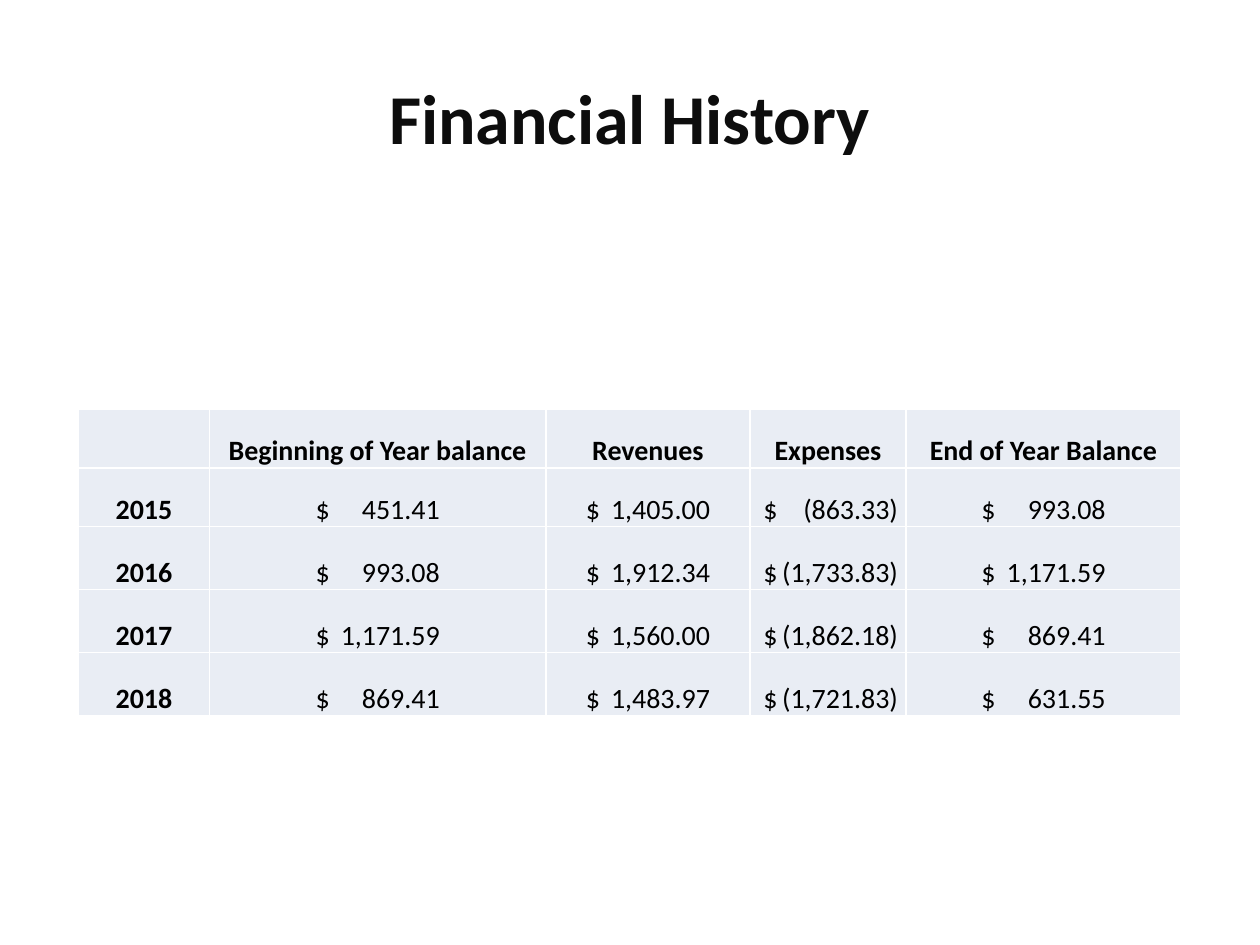
from lxml import etree
from pptx import Presentation
from pptx.dml.color import RGBColor
from pptx.enum.text import MSO_ANCHOR, PP_ALIGN
from pptx.oxml.ns import qn
from pptx.util import Pt

CENTER, LEFT = PP_ALIGN.CENTER, PP_ALIGN.LEFT
MIDDLE, BOTTOM = MSO_ANCHOR.MIDDLE, MSO_ANCHOR.BOTTOM
TITLE_ONLY = 5

FONT = "Calibri"
COLORS = {"title": "0D0D0D", "text": "000000", "cell": "E9EDF4", "border": "FFFFFF"}

HEADERS = ["", "Beginning of Year balance", "Revenues", "Expenses", "End of Year Balance"]
HISTORY = [
    ("2015", "451.41", "1,405.00", "(863.33)", "993.08"),
    ("2016", "993.08", "1,912.34", "(1,733.83)", "1,171.59"),
    ("2017", "1,171.59", "1,560.00", "(1,862.18)", "869.41"),
    ("2018", "869.41", "1,483.97", "(1,721.83)", "631.55"),
]
COLUMN_WIDTHS = [74.9, 192.3, 116.6, 89.3, 157]
ROW_HEIGHTS = [33.5, 33.5, 36, 36, 36]
AMOUNT_WIDTH, EXPENSE_WIDTH = 71, 77  # from the dollar sign to the last digit
EXPENSES = HEADERS.index("Expenses")
INSET = 0.72


def add_solid_line(parent, tag, width, color):
    line = etree.SubElement(parent, qn(tag), w=str(Pt(width)))
    fill = etree.SubElement(line, qn("a:solidFill"))
    etree.SubElement(fill, qn("a:srgbClr"), val=color)
    return line


def style_font(font, size, color, bold):
    font.name, font.size, font.bold = FONT, Pt(size), bold
    font.color.rgb = RGBColor.from_string(color)


def add_title(slide, left, top, width, height):
    title = slide.shapes.title
    title.left, title.top, title.width, title.height = map(Pt, (left, top, width, height))
    frame = title.text_frame
    frame.text = "Financial History"
    frame.vertical_anchor = MIDDLE
    heading = frame.paragraphs[0]
    heading.alignment = CENTER
    font = heading.runs[0].font
    style_font(font, 40, COLORS["title"], True)
    # The letter outline comes first among the run properties
    properties = heading.runs[0]._r.get_or_add_rPr()
    properties.insert(0, add_solid_line(properties, "a:ln", 1.5, COLORS["title"]))


def style_cell(cell):
    cell.margin_left = cell.margin_right = cell.margin_top = Pt(INSET)
    cell.margin_bottom = 0
    cell.vertical_anchor = BOTTOM
    properties = cell._tc.get_or_add_tcPr()
    for side in ("a:lnL", "a:lnR", "a:lnT", "a:lnB"):
        add_solid_line(properties, side, 1, COLORS["border"])
    cell.fill.solid()
    cell.fill.fore_color.rgb = RGBColor.from_string(COLORS["cell"])


def fill_label(cell, label):
    cell.text_frame.text = label
    paragraph = cell.text_frame.paragraphs[0]
    paragraph.alignment = CENTER
    style_font(paragraph.font, 16, COLORS["text"], True)
    for run in paragraph.runs:
        style_font(run.font, 16, COLORS["text"], True)


def fill_amount(cell, amount, column):
    """Set the dollar sign and a right-aligned amount as a block centred in the column."""
    block = EXPENSE_WIDTH if column == EXPENSES else AMOUNT_WIDTH
    shift = 1.5 if column == EXPENSES else 0
    cell.margin_left = Pt((COLUMN_WIDTHS[column] - block) / 2 + shift)
    cell.text_frame.text = f"$\t{amount}"
    paragraph = cell.text_frame.paragraphs[0]
    paragraph.alignment = LEFT
    tabs = etree.SubElement(paragraph._p.get_or_add_pPr(), qn("a:tabLst"))
    etree.SubElement(tabs, qn("a:tab"), pos=str(Pt(block)), algn="r")
    for run in paragraph.runs:
        style_font(run.font, 16, COLORS["text"], False)


def add_history_table(slide, left, top, width, height):
    rows = [HEADERS, *HISTORY]
    table = slide.shapes.add_table(
        len(rows), len(HEADERS), Pt(left), Pt(top), Pt(width), Pt(height)).table
    for column, column_width in zip(table.columns, COLUMN_WIDTHS):
        column.width = Pt(column_width)
    for row, row_height in zip(table.rows, ROW_HEIGHTS):
        row.height = Pt(row_height)
    for r, entries in enumerate(rows):
        for c, entry in enumerate(entries):
            cell = table.cell(r, c)
            style_cell(cell)
            if r == 0 or c == 0:
                fill_label(cell, entry)
            else:
                fill_amount(cell, entry, c)


def main():
    presentation = Presentation()
    presentation.slide_width, presentation.slide_height = Pt(720), Pt(540)
    slide = presentation.slides.add_slide(presentation.slide_layouts[TITLE_ONLY])
    add_title(slide, 36, 21.6, 647.3, 90)
    add_history_table(slide, 44.8, 234, sum(COLUMN_WIDTHS), sum(ROW_HEIGHTS))
    presentation.save("out.pptx")


if __name__ == "__main__":
    main()
